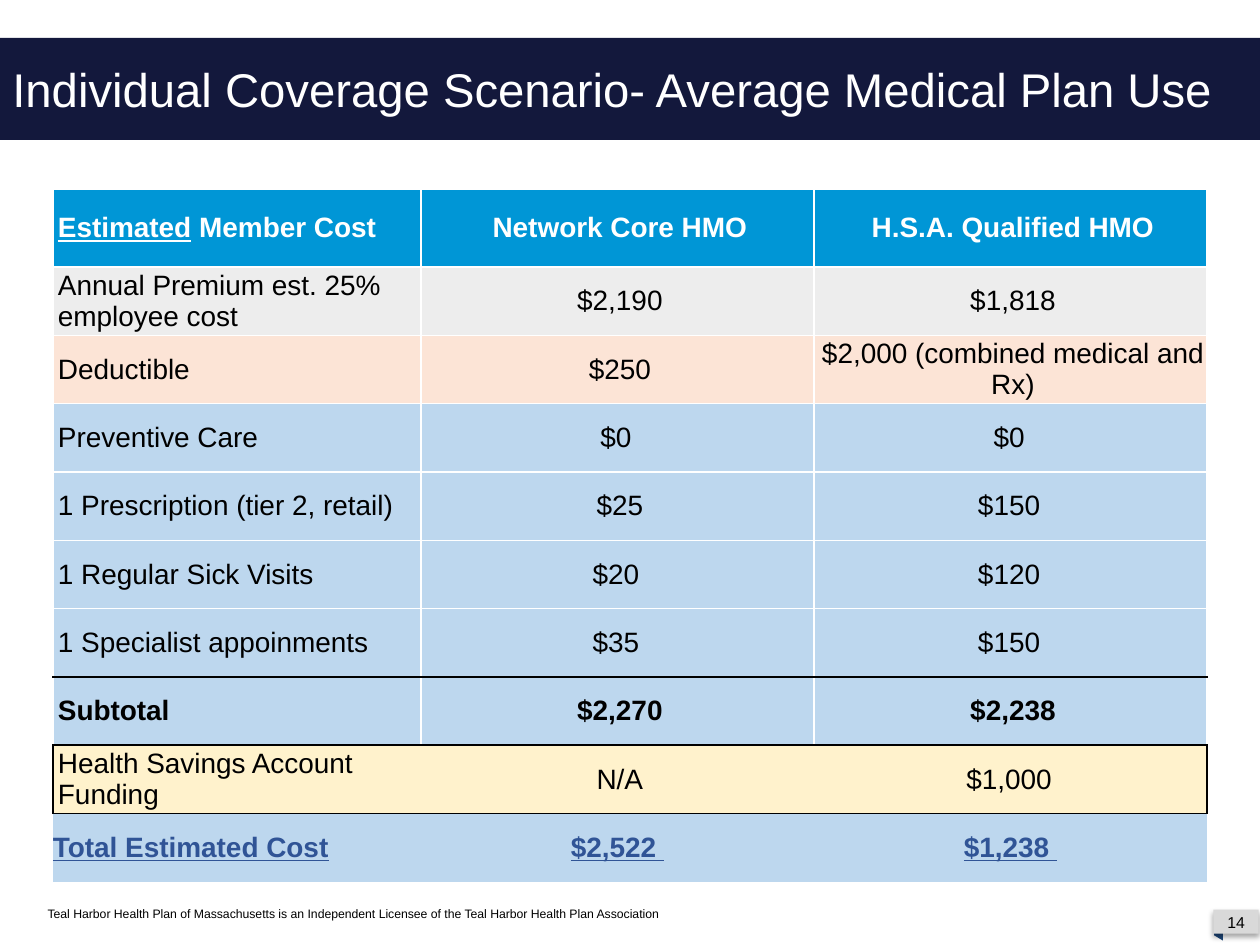
"""Build the slide comparing member costs of two medical plans."""
from dataclasses import dataclass

from pptx import Presentation
from pptx.dml.color import RGBColor
from pptx.enum.shapes import MSO_SHAPE
from pptx.enum.text import MSO_ANCHOR, PP_ALIGN
from pptx.oxml.ns import qn
from pptx.util import Inches, Pt
from lxml import etree

RECTANGLE = MSO_SHAPE.RECTANGLE
PARALLELOGRAM = MSO_SHAPE.PARALLELOGRAM
LEFT, CENTER = PP_ALIGN.LEFT, PP_ALIGN.CENTER
MIDDLE, TOP = MSO_ANCHOR.MIDDLE, MSO_ANCHOR.TOP


@dataclass(frozen=True)
class Theme:
    font: str = "Arial"
    white: str = "FFFFFF"
    black: str = "000000"
    navy: str = "13183C"
    header: str = "0096D6"
    gray: str = "EDEDED"
    peach: str = "FCE4D6"
    blue: str = "BDD7EE"
    yellow: str = "FFF2CC"
    total: str = "305496"
    badge: str = "D9D9D9"
    fold: str = "1F497D"
    title_size: int = 27
    table_size: int = 16
    number_size: int = 9
    footer_size: int = 7


THEME = Theme()
WHITE_LINE = (THEME.white, 1)
HEADER_LINE = (THEME.white, 1.5)
BLACK_LINE = (THEME.black, 1)


@dataclass(frozen=True)
class Row:
    texts: tuple
    fill: str = THEME.blue
    color: str = THEME.black
    bold: bool = False
    underline: bool = False
    inset: float = 0.04
    top: tuple = WHITE_LINE
    bottom: tuple = WHITE_LINE
    outer: tuple | None = WHITE_LINE
    inner: tuple | None = WHITE_LINE


ROWS = (
    Row((" Member Cost", "Network Core HMO", "H.S.A. Qualified HMO"),
        fill=THEME.header, color=THEME.white, bold=True, bottom=HEADER_LINE),
    Row(("Annual Premium est. 25% employee cost", "$2,190", "$1,818"),
        fill=THEME.gray, top=HEADER_LINE),
    Row(("Deductible", "$250", "$2,000 (combined medical and Rx)"), fill=THEME.peach),
    Row(("Preventive Care", "$0 ", "$0 ")),
    Row(("1 Prescription (tier 2, retail)", "$25", "$150 ")),
    Row(("1 Regular Sick Visits", "$20 ", "$120 ")),
    Row(("1 Specialist appoinments", "$35 ", "$150 "), bottom=BLACK_LINE),
    Row(("Subtotal", "$2,270", "$2,238"), bold=True, top=BLACK_LINE, bottom=BLACK_LINE),
    Row(("Health Savings Account Funding", "N/A", "$1,000 "), fill=THEME.yellow,
        top=BLACK_LINE, bottom=BLACK_LINE, outer=BLACK_LINE, inner=None),
    Row(("Total Estimated Cost", "$2,522 ", "$1,238 "), color=THEME.total, bold=True,
        underline=True, inset=0, top=BLACK_LINE, bottom=None, outer=None, inner=None),
)


def write_text(paragraph, text, *, size, color=THEME.black, bold=False,
               underline=False, align=LEFT):
    """Append a formatted run to the paragraph."""
    paragraph.alignment = align
    run = paragraph.add_run()
    run.text = text
    run.font.name = THEME.font
    run.font.size = Pt(size)
    run.font.bold = bold
    run.font.underline = underline
    run.font.color.rgb = RGBColor.from_string(color)


def add_block(slide, kind, left, top, width, height, fill):
    """Add a filled preset shape without line or shadow."""
    shape = slide.shapes.add_shape(
        kind, Inches(left), Inches(top), Inches(width), Inches(height))
    shape.shadow.inherit = False
    shape.fill.solid()
    shape.fill.fore_color.rgb = RGBColor.from_string(fill)
    shape.line.fill.background()
    return shape


def add_label(slide, text, left, top, width, height, *, anchor=TOP, **text_format):
    """Add a wrapping text box with one paragraph."""
    box = slide.shapes.add_textbox(
        Inches(left), Inches(top), Inches(width), Inches(height))
    frame = box.text_frame
    frame.word_wrap = True
    frame.vertical_anchor = anchor
    write_text(frame.paragraphs[0], text, **text_format)


def add_color(parent, color):
    """Append an RGB colour element and return it."""
    return etree.SubElement(parent, qn("a:srgbClr"), val=color)


def cast_shadow(shape):
    """Give the shape a soft shadow straight below it."""
    effects = shape.element.spPr.find(qn("a:effectLst"))
    shadow = etree.SubElement(effects, qn("a:outerShdw"), blurRad=str(Pt(3.1)),
                              dist=str(Pt(1.8)), dir="5400000", rotWithShape="0")
    etree.SubElement(add_color(shadow, THEME.black), qn("a:alpha"), val="35000")


def set_borders(cell, **borders):
    """Draw each cell side, named L, R, T or B, as colour and width or as nothing."""
    properties = cell._tc.get_or_add_tcPr()
    for side, border in borders.items():
        line = etree.SubElement(properties, qn(f"a:ln{side}"))
        if border is None:
            etree.SubElement(line, qn("a:noFill"))
            continue
        color, width = border
        line.set("w", str(Pt(width)))
        add_color(etree.SubElement(line, qn("a:solidFill")), color)


def fill_cell(cell, row, column):
    """Format one table cell and write its text."""
    last = len(row.texts) - 1
    set_borders(cell, L=row.inner if column else row.outer,
                R=row.inner if column < last else row.outer,
                T=row.top, B=row.bottom)
    cell.fill.solid()
    cell.fill.fore_color.rgb = RGBColor.from_string(row.fill)
    cell.vertical_anchor = MIDDLE
    cell.margin_left = Inches(row.inset)
    cell.margin_right = cell.margin_top = cell.margin_bottom = 0
    paragraph = cell.text_frame.paragraphs[0]
    text_format = dict(size=THEME.table_size, color=row.color, bold=row.bold,
                       align=CENTER if column else LEFT)
    if row is ROWS[0] and column == 0:
        write_text(paragraph, "Estimated", underline=True, **text_format)
    write_text(paragraph, row.texts[column], underline=row.underline, **text_format)


def add_cost_table(slide):
    """Add the table of member costs."""
    widths = (2.92, 3.12, 3.12)
    height, header_height = 5.5, 0.62
    table = slide.shapes.add_table(
        len(ROWS), len(widths), Inches(0.42), Inches(1.5),
        Inches(sum(widths)), Inches(height)).table
    table.first_row = table.horz_banding = False
    for column, width in zip(table.columns, widths):
        column.width = Inches(width)
    for index, row in enumerate(ROWS):
        body_height = (height - header_height) / (len(ROWS) - 1)
        table.rows[index].height = Inches(body_height if index else header_height)
        for column in range(len(widths)):
            fill_cell(table.cell(index, column), row, column)


def add_title(slide, text):
    """Add the title band across the slide."""
    band = add_block(slide, RECTANGLE, 0, 0.3, 10, 0.81, THEME.navy)
    band.text_frame.word_wrap = True
    band.text_frame.vertical_anchor = MIDDLE
    write_text(band.text_frame.paragraphs[0], text,
               size=THEME.title_size, color=THEME.white)


def add_page_number(slide, number):
    """Add the folded page number badge."""
    fold = add_block(slide, PARALLELOGRAM, 9.57, 7.33, 0.2, 0.07, THEME.fold)
    fold.rotation = 90
    fold.adjustments[0] = 0.6
    cast_shadow(add_block(slide, RECTANGLE, 9.63, 7.22, 0.36, 0.19, THEME.badge))
    add_label(slide, number, 9.62, 7.23, 0.38, 0.18, anchor=MIDDLE,
              size=THEME.number_size, align=CENTER)


def main():
    """Build and save the presentation."""
    presentation = Presentation()
    presentation.slide_width, presentation.slide_height = Inches(10), Inches(7.5)
    slide = presentation.slides.add_slide(presentation.slide_layouts[6])
    add_label(slide, "Teal Harbor Health Plan of Massachusetts is an Independent "
              "Licensee of the Teal Harbor Health Plan Association",
              0.28, 7.14, 5.56, 0.22, size=THEME.footer_size)
    add_page_number(slide, "14")
    add_cost_table(slide)
    add_title(slide, "Individual Coverage Scenario- Average Medical Plan Use")
    presentation.save("out.pptx")


if __name__ == "__main__":
    main()
